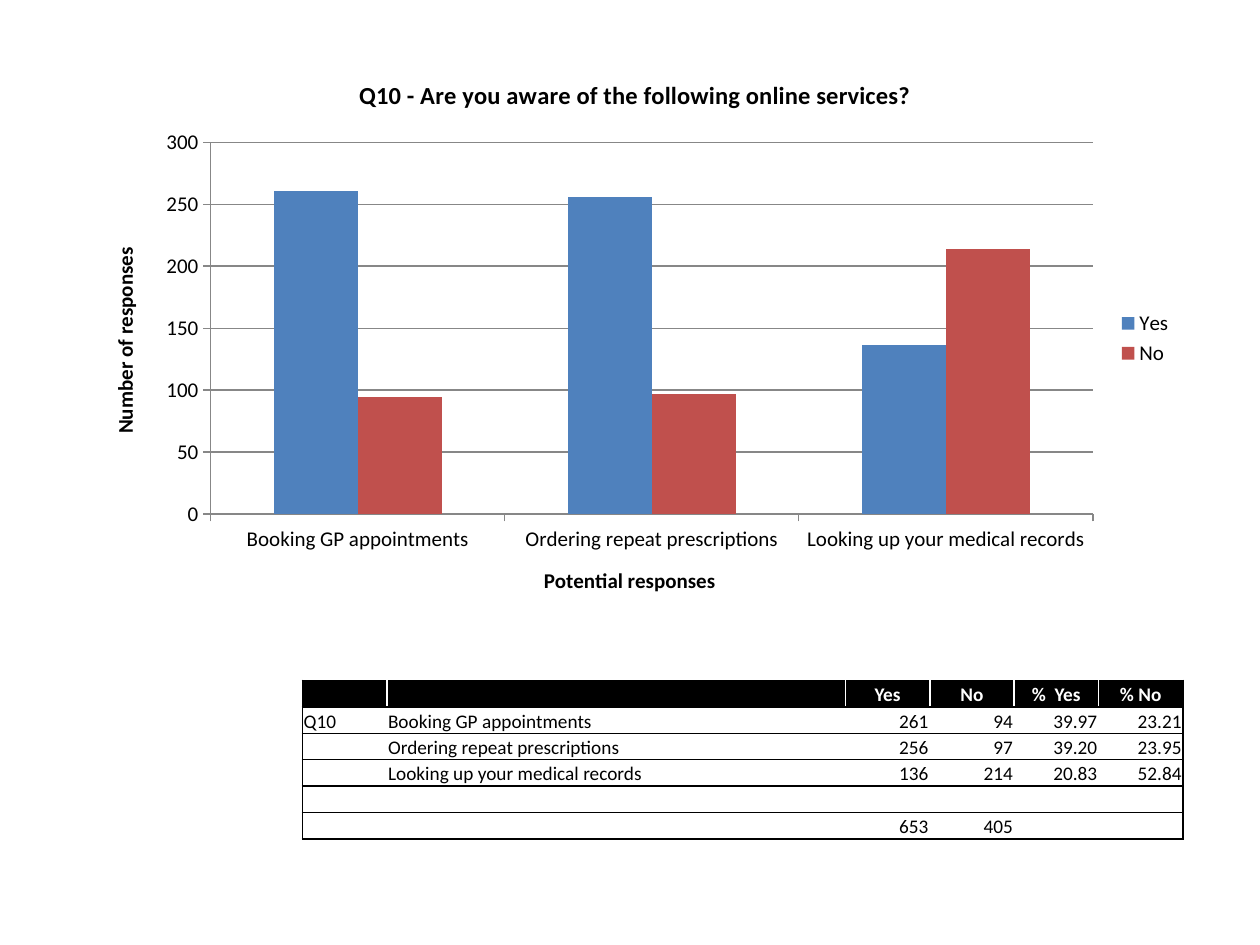
from typing import NamedTuple

from lxml.etree import SubElement
from pptx import Presentation
from pptx.chart.data import CategoryChartData as ChartData
from pptx.dml.color import RGBColor
from pptx.enum.chart import XL_CHART_TYPE as Kind, XL_LEGEND_POSITION as Place
from pptx.enum.chart import XL_TICK_MARK as Tick
from pptx.enum.text import MSO_ANCHOR as Anchor, PP_ALIGN as Align
from pptx.oxml.ns import qn
from pptx.util import Inches, Pt

FONT = "Calibri"
BLACK, WHITE, GREY = "000000", "FFFFFF", "878787"


class Series(NamedTuple):
    name: str
    counts: tuple
    color: str


class Row(NamedTuple):
    texts: tuple
    fill: str = WHITE
    color: str = BLACK
    bold: bool = False


LABELS = ("Booking GP appointments", "Ordering repeat prescriptions",
          "Looking up your medical records")
SERIES = (Series("Yes", (261, 256, 136), "4F81BD"),
          Series("No", (94, 97, 214), "C0504D"))
SHARES = (("39.97", "23.21"), ("39.20", "23.95"), ("20.83", "52.84"))
YES, NO = (s.counts for s in SERIES)

ROWS = (
    Row(("", "", "Yes", "No", "%  Yes", "% No"), BLACK, WHITE, True),
    *(Row(("Q10" if i == 0 else "", label, str(YES[i]), str(NO[i]), *SHARES[i]))
      for i, label in enumerate(LABELS)),
    Row(("",) * 6),
    Row(("", "", str(sum(YES)), str(sum(NO)), "", "")),
)
WIDTHS = (0.67, 3.64, 0.67, 0.67, 0.67, 0.67)
HEIGHT = 0.21


def rgb(code: str) -> RGBColor:
    return RGBColor.from_string(code)


def style(font, size: float, color: str = BLACK, bold: bool = False) -> None:
    font.name, font.size, font.bold = FONT, Pt(size), bold
    font.color.rgb = rgb(color)


def add_title(owner, text: str, size: float) -> None:
    """Give a chart or an axis a bold title."""
    owner.has_title = True
    run = owner.chart_title if hasattr(owner, "chart_title") else owner.axis_title
    run = run.text_frame.paragraphs[0].add_run()
    run.text = text
    style(run.font, size, bold=True)


def draw_line(line) -> None:
    line.color.rgb = rgb(GREY)
    line.width = Pt(0.75)


def add_chart(slide) -> None:
    data = ChartData()
    data.categories = LABELS
    for s in SERIES:
        data.add_series(s.name, s.counts)
    frame = slide.shapes.add_chart(Kind.COLUMN_CLUSTERED, Inches(0.67), Inches(0.44),
                                   Inches(8.74), Inches(4.49), data)
    chart = frame.chart
    style(chart.font, 12)
    add_title(chart, "Q10 - Are you aware of the following online services?", 14)
    add_title(chart.category_axis, "Potential responses", 12)
    add_title(chart.value_axis, "Number of responses", 12)
    for axis in (chart.category_axis, chart.value_axis):
        axis.major_tick_mark, axis.minor_tick_mark = Tick.OUTSIDE, Tick.NONE
        draw_line(axis.format.line)
    scale = chart.value_axis
    scale.minimum_scale, scale.maximum_scale, scale.major_unit = 0, 300, 50
    draw_line(scale.major_gridlines.format.line)
    chart.has_legend = True
    chart.legend.position = Place.RIGHT
    chart.legend.include_in_layout = False
    plot = chart.plots[0]
    plot.gap_width, plot.overlap, plot.vary_by_categories = 150, 0, False
    for bars, s in zip(plot.series, SERIES):
        bars.format.fill.solid()
        bars.format.fill.fore_color.rgb = rgb(s.color)


def add_border(cell, side: str) -> None:
    line = SubElement(cell._tc.get_or_add_tcPr(), qn(f"a:ln{side}"), w=str(Pt(1)))
    fill = SubElement(line, qn("a:solidFill"))
    SubElement(fill, qn("a:srgbClr"), val=BLACK)


def fill_cell(cell, text: str, row: Row, align: Align, sides: str) -> None:
    for side in sides:
        add_border(cell, side)
    cell.fill.solid()
    cell.fill.fore_color.rgb = rgb(row.fill)
    cell.margin_left = cell.margin_right = cell.margin_top = Inches(0.01)
    cell.margin_bottom = 0
    cell.vertical_anchor = Anchor.BOTTOM
    para = cell.text_frame.paragraphs[0]
    para.alignment = align
    if text:
        run = para.add_run()
        run.text = text
        style(run.font, 11, row.color, row.bold)
    else:
        SubElement(para._p, qn("a:endParaRPr"), sz="1100")


def add_table(slide) -> None:
    frame = slide.shapes.add_table(len(ROWS), len(WIDTHS), Inches(2.4), Inches(5.4),
                                   Inches(sum(WIDTHS)), Inches(HEIGHT * len(ROWS)))
    table = frame.table
    for col, width in zip(table.columns, WIDTHS):
        col.width = Inches(width)
    last = len(WIDTHS) - 1
    for r, row in enumerate(ROWS):
        table.rows[r].height = Inches(HEIGHT)
        for c, text in enumerate(row.texts):
            number = Align.CENTER if r == 0 else Align.RIGHT
            sides = {0: "LTB", last: "RTB"}.get(c, "TB")
            fill_cell(table.cell(r, c), text, row, Align.LEFT if c < 2 else number, sides)


def main() -> None:
    deck = Presentation()
    deck.slide_width, deck.slide_height = Inches(10), Inches(7.5)
    slide = deck.slides.add_slide(deck.slide_layouts[6])
    add_chart(slide)
    add_table(slide)
    deck.save("out.pptx")


if __name__ == "__main__":
    main()
